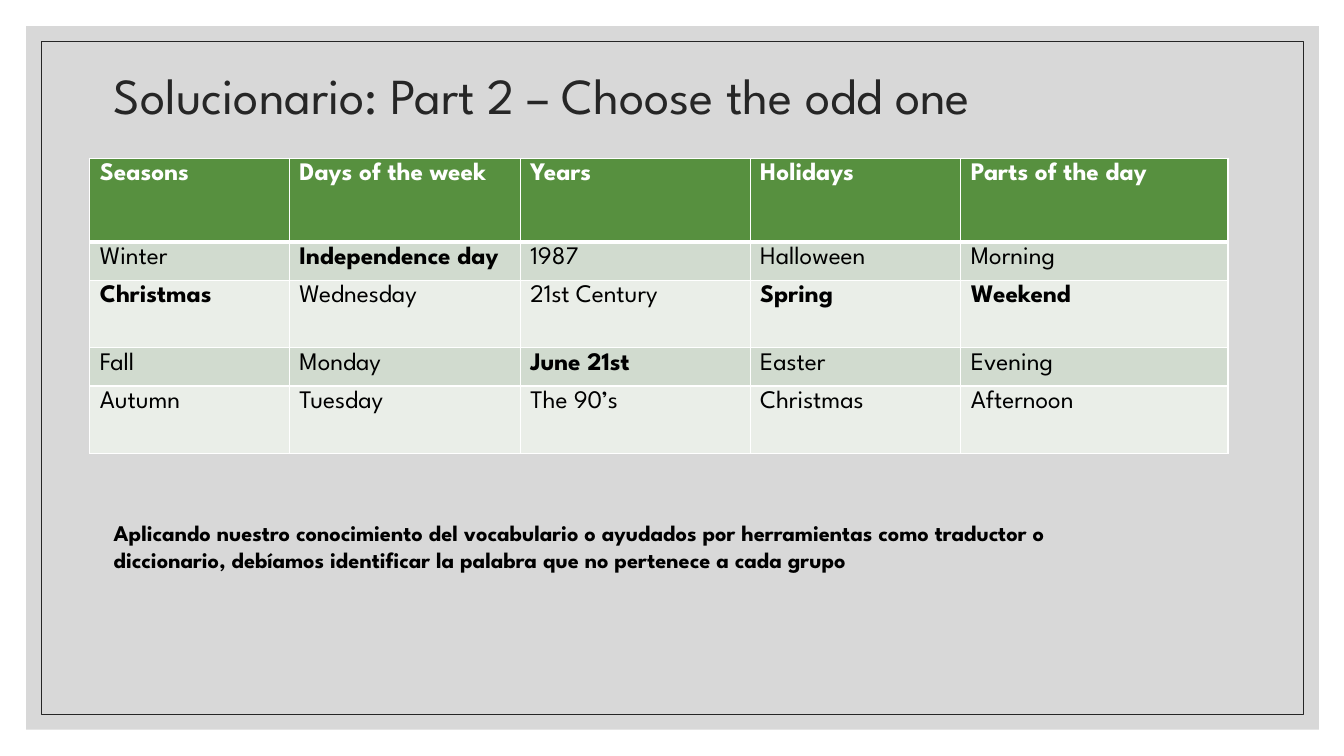
from dataclasses import dataclass

from lxml.etree import SubElement
from pptx import Presentation
from pptx.dml.color import RGBColor as Rgb
from pptx.enum.shapes import MSO_SHAPE as Shape
from pptx.enum.text import MSO_ANCHOR as Anchor, MSO_AUTO_SIZE as AutoSize, PP_ALIGN as Align
from pptx.oxml.ns import qn
from pptx.util import Inches, Pt


@dataclass(frozen=True)
class Theme:
    font: str = "League Spartan"
    panel: str = "BFBFBF"
    ink: str = "262626"
    black: str = "000000"
    white: str = "FFFFFF"
    header: str = "57903F"
    bands: tuple = ("D1DBCF", "EAEEE8")
    title_size: int = 36
    table_size: int = 18
    note_size: int = 16


HEADINGS = ["Seasons", "Days of the week", "Years", "Holidays", "Parts of the day"]
WORD_ROWS = [
    ["Winter", "Independence day", "1987", "Halloween", "Morning"],
    ["Christmas", "Wednesday", "21st Century", "Spring", "Weekend"],
    ["Fall", "Monday", "June 21st", "Easter", "Evening"],
    ["Autumn", "Tuesday", "The 90’s", "Christmas", "Afternoon"],
]
ODD_ONES = {(1, 1), (2, 0), (2, 3), (2, 4), (3, 2)}
COLUMN_WIDTHS = [1.98, 2.29, 2.28, 2.09, 2.65]
ROW_HEIGHTS = [0.83, 0.38, 0.67, 0.38, 0.67]
EXPLANATION = (
    "Aplicando nuestro conocimiento del vocabulario o ayudados por herramientas como "
    "traductor o diccionario, debíamos identificar la palabra que no pertenece a cada grupo"
)


def write(frame, text, *, font, size, color, bold=False, spacing=None):
    paragraph = frame.paragraphs[0]
    paragraph.alignment = Align.LEFT
    if spacing:
        paragraph.line_spacing = spacing
    run = paragraph.add_run()
    run.text = text
    run.font.name = font
    run.font.size = Pt(size)
    run.font.bold = bold
    run.font.color.rgb = Rgb.from_string(color)


class SlideBuilder:
    """Draws themed elements on one slide."""

    def __init__(self, slide, theme):
        self.slide = slide
        self.theme = theme

    def panel(self, left, top, width, height, fill=None, opacity=100, line=None):
        panel = self.slide.shapes.add_shape(
            Shape.RECTANGLE, Inches(left), Inches(top), Inches(width), Inches(height))
        panel.shadow.inherit = False
        if fill:
            panel.fill.solid()
            panel.fill.fore_color.rgb = Rgb.from_string(fill)
            tint = panel.element.spPr.find(qn("a:solidFill"))[0]
            SubElement(tint, qn("a:alpha"), val=str(opacity * 1000))
        else:
            panel.fill.background()
        if line:
            panel.line.color.rgb = Rgb.from_string(line)
            panel.line.width = Pt(0.5)
        else:
            panel.line.fill.background()

    def title(self, text, left, top, width, height):
        title = self.slide.shapes.title
        title.element.getparent().append(title.element)
        title.left, title.top = Inches(left), Inches(top)
        title.width, title.height = Inches(width), Inches(height)
        frame = title.text_frame
        frame.auto_size = AutoSize.NONE
        frame.vertical_anchor = Anchor.MIDDLE
        write(frame, text, font=self.theme.font, size=self.theme.title_size,
              color=self.theme.ink, spacing=0.9)

    def note(self, text, left, top, width, height):
        note = self.slide.shapes.add_textbox(
            Inches(left), Inches(top), Inches(width), Inches(height))
        note.text_frame.word_wrap = True
        note.text_frame.auto_size = AutoSize.SHAPE_TO_FIT_TEXT
        write(note.text_frame, text, font=self.theme.font, size=self.theme.note_size,
              color=self.theme.black, bold=True)

    def table(self, rows, odd_ones, left, top, widths, heights):
        table = self.slide.shapes.add_table(
            len(rows), len(widths), Inches(left), Inches(top),
            Inches(sum(widths)), Inches(sum(heights))).table
        for column, width in zip(table.columns, widths):
            column.width = Inches(width)
        for row, height in zip(table.rows, heights):
            row.height = Inches(height)
        for r, words in enumerate(rows):
            for c, word in enumerate(words):
                self.cell(table.cell(r, c), word, r, (r, c) in odd_ones)

    def cell(self, cell, word, row, odd):
        theme = self.theme
        is_header = row == 0
        borders = {"L": 1, "R": 1, "T": 3 if row == 1 else 1, "B": 3 if is_header else 1}
        properties = cell._tc.get_or_add_tcPr()
        for side, width in borders.items():
            border = SubElement(properties, qn(f"a:ln{side}"), w=str(Pt(width)))
            SubElement(SubElement(border, qn("a:solidFill")), qn("a:srgbClr"), val=theme.white)
        cell.fill.solid()
        cell.fill.fore_color.rgb = Rgb.from_string(
            theme.header if is_header else theme.bands[(row - 1) % 2])
        write(cell.text_frame, word, font=theme.font, size=theme.table_size,
              color=theme.white if is_header else theme.black, bold=is_header or odd)


def main():
    theme = Theme()
    deck = Presentation()
    deck.slide_width, deck.slide_height = Inches(13.33), Inches(7.5)
    builder = SlideBuilder(deck.slides.add_slide(deck.slide_layouts[5]), theme)
    builder.panel(0.26, 0.26, 12.82, 6.98, fill=theme.panel, opacity=60)
    builder.panel(0.41, 0.41, 12.52, 6.68, line=theme.ink)
    builder.title("Solucionario: Part 2 – Choose the odd one", 1.03, 0.22, 11, 1.5)
    builder.table([HEADINGS, *WORD_ROWS], ODD_ONES, 0.89, 1.57, COLUMN_WIDTHS, ROW_HEIGHTS)
    builder.note(EXPLANATION, 1.03, 5.1, 10.54, 0.64)
    deck.save("out.pptx")


if __name__ == "__main__":
    main()
